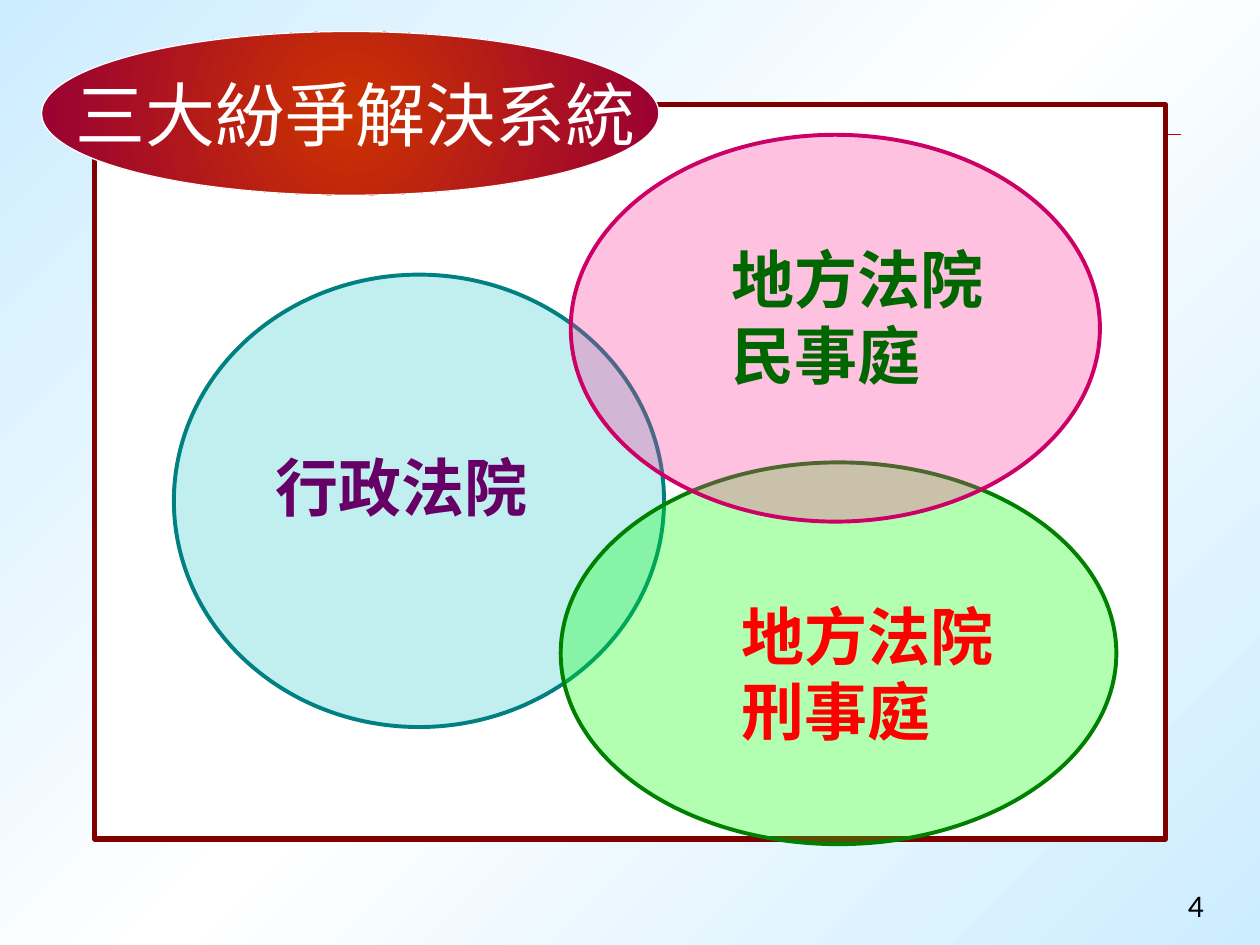
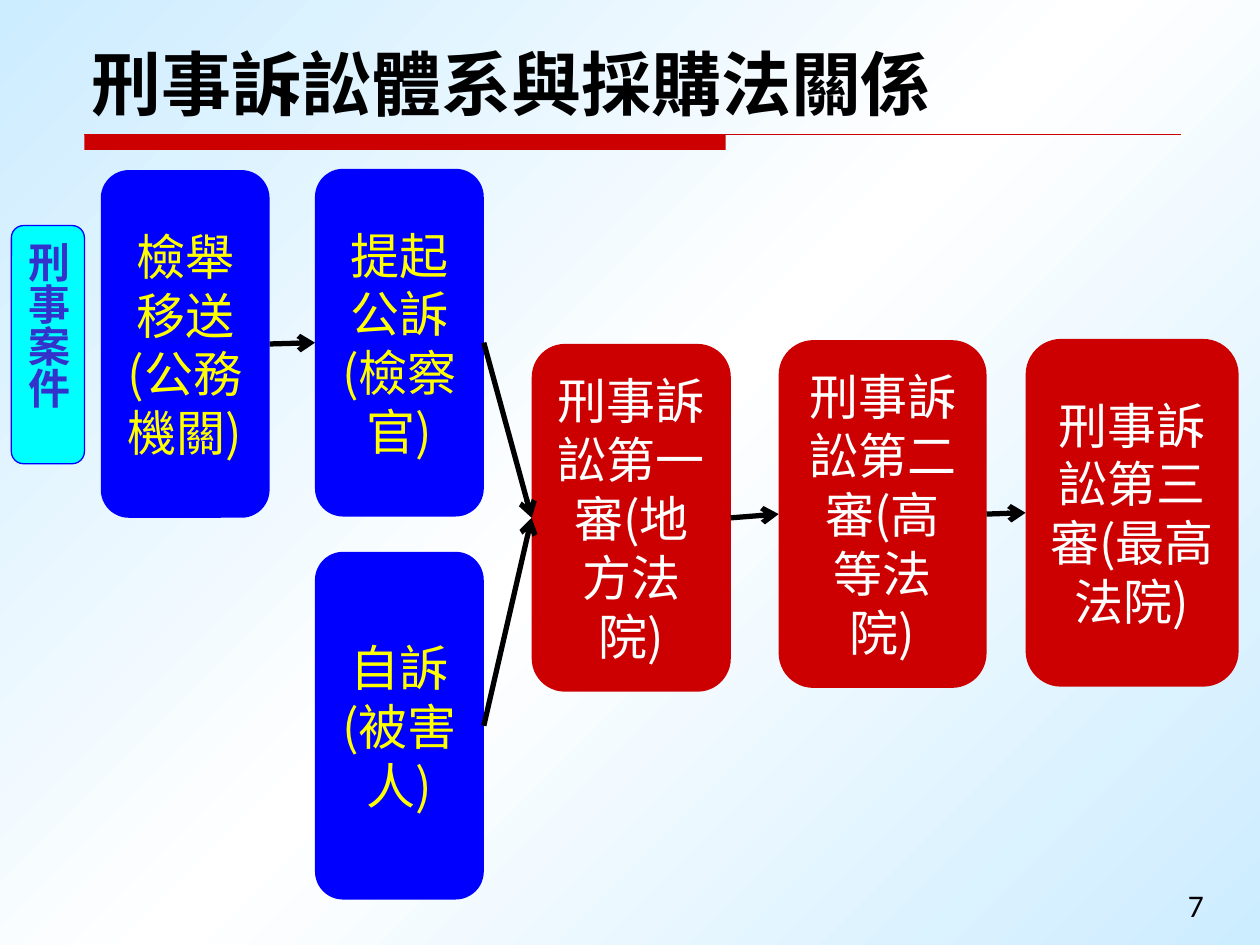
from dataclasses import dataclass
from typing import Optional

from lxml.etree import SubElement
from pptx import Presentation
from pptx.dml.color import RGBColor
from pptx.enum.shapes import MSO_CONNECTOR as Connector, MSO_SHAPE as Preset
from pptx.enum.text import MSO_ANCHOR as Anchor, PP_ALIGN as Align
from pptx.oxml.ns import qn
from pptx.util import Inches, Pt

BLACK = RGBColor(0x00, 0x00, 0x00)
WHITE = RGBColor(0xFF, 0xFF, 0xFF)
SKY = RGBColor(0xCC, 0xEC, 0xFF)
RED = RGBColor(0xCC, 0x00, 0x00)
BRIGHT_RED = RGBColor(0xFF, 0x00, 0x00)
MAROON = RGBColor(0x80, 0x00, 0x00)
ORANGE = RGBColor(0xCC, 0x33, 0x00)
WINE = RGBColor(0x99, 0x00, 0x33)
TURQUOISE = RGBColor(0x33, 0xCC, 0xCC)
TEAL = RGBColor(0x00, 0x80, 0x80)
LIME = RGBColor(0x00, 0xFF, 0x00)
GREEN = RGBColor(0x00, 0x80, 0x00)
DARK_GREEN = RGBColor(0x00, 0x66, 0x00)
PINK = RGBColor(0xFF, 0x33, 0x99)
MAGENTA = RGBColor(0xCC, 0x00, 0x66)
PURPLE = RGBColor(0x66, 0x00, 0x66)
BLUE = RGBColor(0x00, 0x00, 0xFF)
INDIGO = RGBColor(0x33, 0x33, 0xCC)
CYAN = RGBColor(0x00, 0xFF, 0xFF)
YELLOW = RGBColor(0xFF, 0xFF, 0x00)

CJK, SANS, ARIAL, CALIBRI = "Noto Sans CJK SC", "DejaVu Sans", "Arial", "Calibri"


@dataclass(frozen=True)
class Box:
    left: float
    top: float
    width: float
    height: float

    def lengths(self):
        return [Inches(v) for v in (self.left, self.top, self.width, self.height)]


@dataclass(frozen=True)
class TextStyle:
    size: int
    font: str
    color: RGBColor
    bold: bool = False


@dataclass(frozen=True)
class CourtCircle:
    box: Box
    fill: RGBColor
    outline: RGBColor


@dataclass(frozen=True)
class CourtLabel:
    text: str
    box: Box
    color: RGBColor


@dataclass(frozen=True)
class Step:
    text: str
    left: float
    top: float
    width: float
    fill: RGBColor
    text_color: RGBColor


STEP_HEIGHT = 2.76
FRAME = Box(0.75, 0.83, 8.5, 5.83)
TITLE_STYLE = TextStyle(40, SANS, BLACK, True)
PAGE_STYLE = TextStyle(18, CALIBRI, BLACK)

COURT_CIRCLES = [
    CourtCircle(Box(1.38, 2.18, 3.89, 3.59), TURQUOISE, TEAL),
    CourtCircle(Box(4.45, 3.67, 4.41, 3.03), LIME, GREEN),
    CourtCircle(Box(4.53, 1.07, 4.2, 3.07), PINK, MAGENTA),
]
COURT_LABELS = [
    CourtLabel("地方法院民事庭", Box(5.71, 1.86, 2.47, 1.3), DARK_GREEN),
    CourtLabel("地方法院刑事庭", Box(5.79, 4.69, 2.24, 1.3), BRIGHT_RED),
    CourtLabel("行政法院", Box(2.09, 3.51, 2.25, 0.7), PURPLE),
]
STEPS = {
    "referral": Step("檢舉移送(公務機關)", 0.8, 1.35, 1.34, BLUE, YELLOW),
    "prosecution": Step("提起公訴(檢察官)", 2.5, 1.34, 1.34, BLUE, YELLOW),
    "private": Step("自訴(被害人)", 2.5, 4.38, 1.34, BLUE, YELLOW),
    "first": Step("刑事訴訟第一審(地方法院)", 4.22, 2.73, 1.58, RED, WHITE),
    "second": Step("刑事訴訟第二審(高等法院)", 6.18, 2.7, 1.65, RED, WHITE),
    "third": Step("刑事訴訟第三審(最高法院)", 8.14, 2.69, 1.69, RED, WHITE),
}
STEP_ARROWS = [
    ("referral", "prosecution"),
    ("prosecution", "first"),
    ("private", "first"),
    ("first", "second"),
    ("second", "third"),
]


def set_gradient(fill, owner, stops, radial=False):
    """Fill with (percent, colour) stops, diagonally or from the centre outwards."""
    fill.gradient()
    gradient = owner.find(".//" + qn("a:gradFill"))
    for child in list(gradient):
        gradient.remove(child)
    stop_list = SubElement(gradient, qn("a:gsLst"))
    for percent, color in stops:
        stop = SubElement(stop_list, qn("a:gs"), pos=str(percent * 1000))
        SubElement(stop, qn("a:srgbClr"), val=str(color))
    if radial:
        shade = SubElement(gradient, qn("a:path"), {"path": "circle"})
        SubElement(shade, qn("a:fillToRect"), dict.fromkeys("ltrb", "50000"))
    else:
        SubElement(gradient, qn("a:lin"), ang=str(45 * 60000), scaled="0")


def write(shape, text: str, style: TextStyle, align=Align.LEFT,
          anchor=Anchor.TOP, wrap: bool = True):
    frame = shape.text_frame
    frame.text = text
    frame.word_wrap = wrap
    frame.vertical_anchor = anchor
    paragraph = frame.paragraphs[0]
    paragraph.alignment = align
    font = paragraph.runs[0].font
    font.size, font.bold, font.name = Pt(style.size), style.bold, style.font
    font.color.rgb = style.color
    SubElement(paragraph.runs[0]._r.get_or_add_rPr(), qn("a:ea"), typeface=style.font)


def add_text(slide, box: Box, text: str, style: TextStyle, anchor=Anchor.TOP):
    write(slide.shapes.add_textbox(*box.lengths()), text, style, anchor=anchor)


def add_preset(slide, preset, box: Box, fill: Optional[RGBColor] = None,
               outline: Optional[RGBColor] = None, weight: float = 0.75):
    shape = slide.shapes.add_shape(preset, *box.lengths())
    shape.shadow.inherit = False
    if fill is not None:
        shape.fill.solid()
        shape.fill.fore_color.rgb = fill
    if outline is None:
        shape.line.fill.background()
    else:
        shape.line.color.rgb = outline
        shape.line.width = Pt(weight)
    return shape


def add_line(slide, start, end, color: RGBColor, weight: float):
    ends = [Inches(v) for v in (*start, *end)]
    line = slide.shapes.add_connector(Connector.STRAIGHT, *ends)
    line.line.color.rgb = color
    line.line.width = Pt(weight)
    SubElement(line._element.spPr, qn("a:effectLst"))
    return line


def add_arrow(slide, source, target):
    """Arrow from the right side of source to the left side of target."""
    arrow = add_line(slide, (0, 0), (1, 1), BLACK, 3)
    arrow.begin_connect(source, 3)
    arrow.end_connect(target, 1)
    SubElement(arrow.line._get_or_add_ln(), qn("a:tailEnd"), type="arrow")


def add_base_slide(deck, page: int):
    """Slide with the shared background, red rule and page number."""
    slide = deck.slides.add_slide(deck.slide_layouts[6])
    set_gradient(slide.background.fill, slide.element,
                 [(0, SKY), (50, WHITE), (100, SKY)])
    add_preset(slide, Preset.RECTANGLE, Box(0.67, 1.07, 5.09, 0.12), RED)
    add_line(slide, (0.67, 1.07), (9.37, 1.07), RED, 0.75)
    add_text(slide, Box(9.33, 6.98, 0.45, 0.3), str(page), PAGE_STYLE)
    return slide


def build_dispute_systems(deck):
    slide = add_base_slide(deck, 4)
    add_preset(slide, Preset.RECTANGLE, FRAME, WHITE, MAROON, 3)

    heading = add_preset(slide, Preset.OVAL, Box(0.33, 0.25, 4.9, 1.3), outline=WHITE)
    set_gradient(heading.fill, heading.element, [(0, ORANGE), (100, WINE)], radial=True)
    write(heading, "三大紛爭解決系統", TextStyle(40, CJK, WHITE),
          Align.CENTER, Anchor.MIDDLE, wrap=False)
    heading.text_frame.margin_left = Inches(0.18)

    for court in COURT_CIRCLES:
        circle = add_preset(slide, Preset.OVAL, court.box, court.fill, court.outline, 2.25)
        fill_color = circle.element.spPr.find(qn("a:solidFill")).find(qn("a:srgbClr"))
        SubElement(fill_color, qn("a:alpha"), val="30000")
    for label in COURT_LABELS:
        add_text(slide, label.box, label.text, TextStyle(36, ARIAL, label.color, True))


def build_criminal_procedure(deck):
    slide = add_base_slide(deck, 7)
    add_text(slide, Box(0.63, 0.2, 8.75, 0.84), "刑事訴訟體系與採購法關係",
             TITLE_STYLE, Anchor.BOTTOM)

    boxes = {}
    for key, step in STEPS.items():
        box = Box(step.left, step.top, step.width, STEP_HEIGHT)
        boxes[key] = add_preset(slide, Preset.ROUNDED_RECTANGLE, box, step.fill)
        write(boxes[key], step.text, TextStyle(28, CJK, step.text_color),
              Align.CENTER, Anchor.MIDDLE)
    for source, target in STEP_ARROWS:
        add_arrow(slide, boxes[source], boxes[target])

    case_tag = add_preset(slide, Preset.ROUNDED_RECTANGLE,
                          Box(0.09, 1.79, 0.58, 1.89), CYAN, BLUE)
    write(case_tag, "刑事案件", TextStyle(24, SANS, INDIGO, True),
          Align.CENTER, Anchor.MIDDLE, wrap=False)
    case_tag.text_frame._txBody.bodyPr.set("vert", "eaVert")


def main():
    deck = Presentation()
    deck.slide_width, deck.slide_height = Inches(10), Inches(7.5)
    build_dispute_systems(deck)
    build_criminal_procedure(deck)
    deck.save("out.pptx")


if __name__ == "__main__":
    main()
